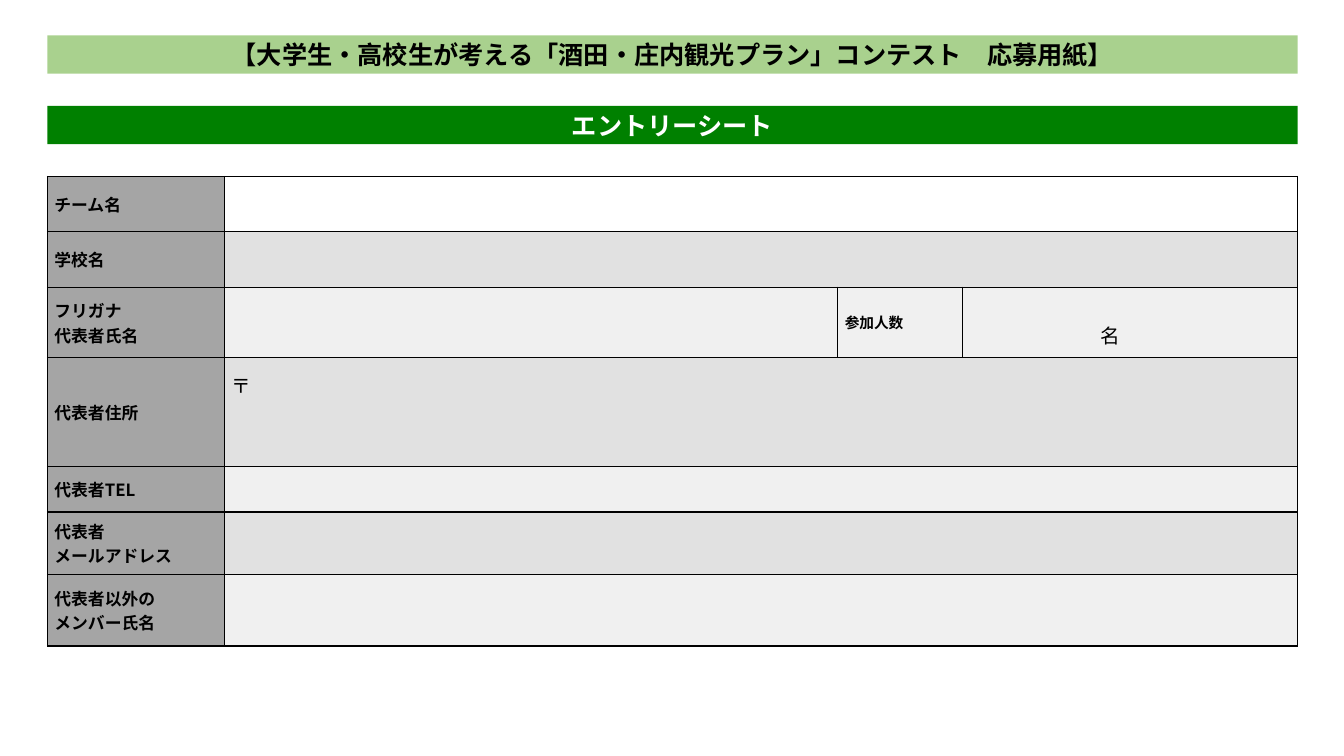
from pptx import Presentation
from pptx.util import Inches, Pt
from pptx.dml.color import RGBColor
from pptx.enum.shapes import MSO_SHAPE
from pptx.enum.text import PP_ALIGN, MSO_ANCHOR
from lxml.etree import SubElement
from pptx.oxml.ns import qn

FONT = "Noto Sans CJK JP"
HUE = {"lime": "A9D18E", "green": "008000", "label": "A5A5A5", "dark": "E1E1E1",
       "light": "F0F0F0", "white": "FFFFFF", "black": "000000"}
LEFT, TOP, WIDTH, GAP, BAR = 0.47, 0.35, 12.4, 0.7, 0.38
BARS = [
    ("【大学生・高校生が考える「酒田・庄内観光プラン」コンテスト　応募用紙】", "lime", "black"),
    ("エントリーシート", "green", "white"),
]
COLS = [1.76, 6.08, 1.24, 3.32]
ROWS = [
    (0.55, ["チーム名"], "white"),
    (0.55, ["学校名"], "dark"),
    (0.7, ["フリガナ", "代表者氏名"], "light"),
    (1.08, ["代表者住所"], "dark"),
    (0.45, ["代表者TEL"], "light"),
    (0.62, ["代表者", "メールアドレス"], "dark"),
    (0.71, ["代表者以外の", "メンバー氏名"], "light"),
]
SPLIT, POST = 2, 3


def rgb(name):
    return RGBColor.from_string(HUE[name])


def write(frame, lines, size, align, hue="black", bold=True):
    for i, line in enumerate(lines):
        para = frame.add_paragraph() if i else frame.paragraphs[0]
        para.alignment = align
        run = para.add_run()
        run.text = line
        font = run.font
        font.size, font.bold, font.name = Pt(size), bold, FONT
        font.color.rgb = rgb(hue)
        SubElement(font._element, qn("a:ea"), typeface=FONT)


def dress(cell, hue):
    props = cell._tc.get_or_add_tcPr()
    for side in ("L", "R", "T", "B"):
        line = SubElement(props, qn(f"a:ln{side}"), w=str(Pt(1)))
        fill = SubElement(line, qn("a:solidFill"))
        SubElement(fill, qn("a:srgbClr"), val=HUE["black"])
    cell.fill.solid()
    cell.fill.fore_color.rgb = rgb(hue)
    cell.margin_left = cell.margin_right = Inches(0.07)
    cell.margin_top = cell.margin_bottom = 0
    cell.vertical_anchor = MSO_ANCHOR.MIDDLE


def note(cell, text, size=14, bold=False):
    write(cell.text_frame, [text], size, PP_ALIGN.JUSTIFY, bold=bold)


deck = Presentation()
deck.slide_width, deck.slide_height = Inches(13.33), Inches(7.5)
slide = deck.slides.add_slide(deck.slide_layouts[6])

for i, (text, fill, ink) in enumerate(BARS):
    bar = slide.shapes.add_shape(MSO_SHAPE.RECTANGLE, Inches(LEFT), Inches(TOP + i * GAP),
                                 Inches(WIDTH), Inches(BAR))
    bar.shadow.inherit = False
    bar.fill.solid()
    bar.fill.fore_color.rgb = rgb(fill)
    bar.line.fill.background()
    bar.text_frame.word_wrap = True
    bar.text_frame.vertical_anchor = MSO_ANCHOR.MIDDLE
    write(bar.text_frame, [text], 18, PP_ALIGN.CENTER, ink)

form = slide.shapes.add_table(len(ROWS), len(COLS), Inches(LEFT), Inches(TOP + len(BARS) * GAP),
                              Inches(WIDTH), Inches(sum(row[0] for row in ROWS))).table
form.first_row = form.horz_banding = False
for col, wide in zip(form.columns, COLS):
    col.width = Inches(wide)
for r, (tall, label, hue) in enumerate(ROWS):
    form.rows[r].height = Inches(tall)
    for c in range(len(COLS)):
        dress(form.cell(r, c), hue if c else "label")
    write(form.cell(r, 0).text_frame, label, 12, PP_ALIGN.JUSTIFY)
    if r != SPLIT:
        form.cell(r, 1).merge(form.cell(r, len(COLS) - 1))

note(form.cell(SPLIT, 2), "参加人数", 10.5, True)

count = form.cell(SPLIT, 3)
note(count, "名")
count.vertical_anchor = MSO_ANCHOR.BOTTOM
count.margin_bottom = Inches(0.09)
count.margin_left = Inches(1.37)

post = form.cell(POST, 1)
note(post, "〒")
post.vertical_anchor = MSO_ANCHOR.TOP
post.margin_top = Inches(0.13)

deck.save("out.pptx")
